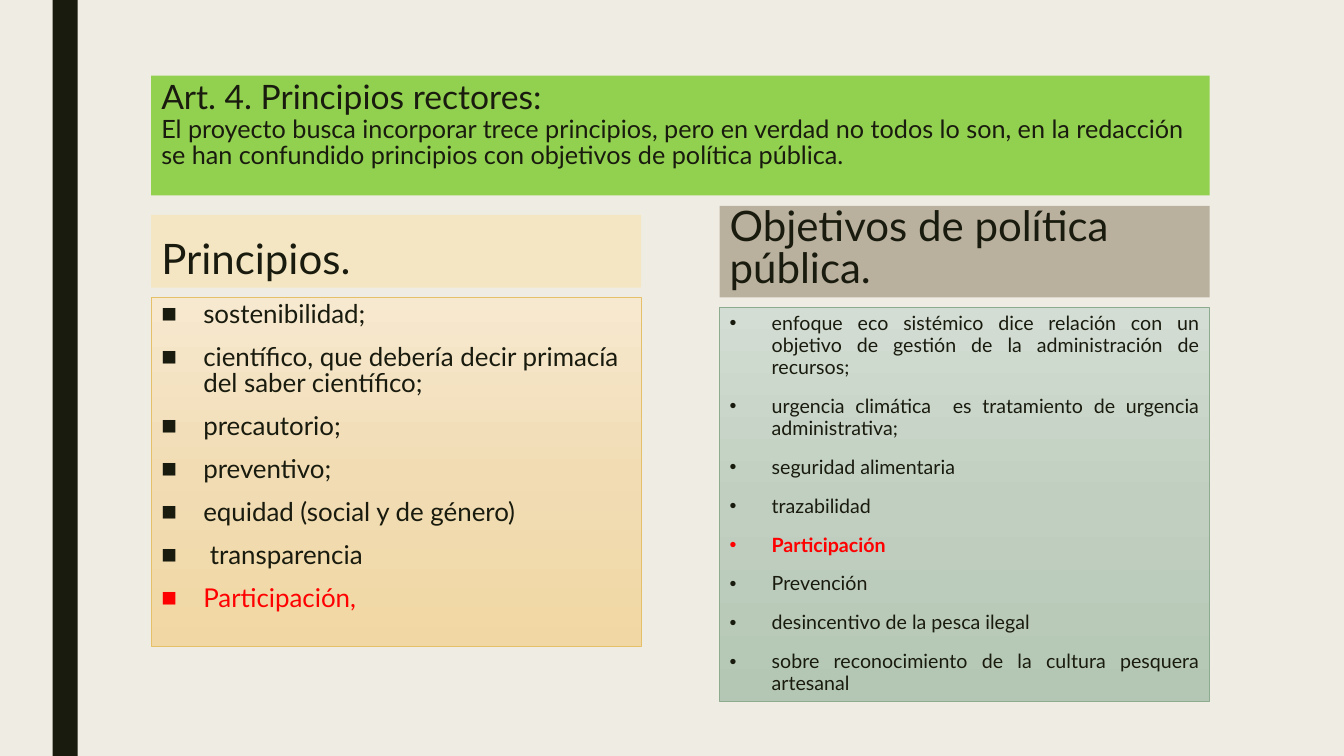
from copy import deepcopy

from lxml.etree import SubElement
from pptx import Presentation
from pptx.dml.color import RGBColor
from pptx.enum.shapes import MSO_SHAPE
from pptx.enum.text import MSO_ANCHOR, MSO_AUTO_SIZE, PP_ALIGN
from pptx.oxml.ns import qn
from pptx.util import Pt

FONT = "Lato"
INK = RGBColor(0x19, 0x1B, 0x0E)
RED = RGBColor(0xFF, 0x00, 0x00)
BACKGROUND = RGBColor(0xEF, 0xED, 0xE3)
GREEN = RGBColor(0x92, 0xD0, 0x50)
CREAM = RGBColor(0xF5, 0xE6, 0xC3)
TAUPE = RGBColor(0xBA, 0xB0, 0x9E)
GOLD_LINE = RGBColor(0xE6, 0xC0, 0x69)
SAGE_LINE = RGBColor(0x8D, 0xAB, 0x8E)
GOLD_STOPS = [RGBColor(0xF7, 0xE9, 0xD0), RGBColor(0xF1, 0xDC, 0xB4), RGBColor(0xF1, 0xD7, 0xA3)]
SAGE_STOPS = [RGBColor(0xD3, 0xDD, 0xD3), RGBColor(0xC0, 0xCF, 0xC0), RGBColor(0xB4, 0xC7, 0xB5)]

COLUMN_WIDTH = 350
LEFT, RIGHT = 108, 514


def prepare(shape, left, top, width, height, anchor=MSO_ANCHOR.TOP):
    """Place a placeholder and return its text frame."""
    shape.left, shape.top, shape.width, shape.height = map(Pt, (left, top, width, height))
    frame = shape.text_frame
    frame.word_wrap = True
    frame.auto_size = MSO_AUTO_SIZE.NONE
    frame.vertical_anchor = anchor
    return frame


def add_text(paragraph, text, size, color=INK, bold=False):
    run = paragraph.add_run()
    run.text = text
    for name, value in {"name": FONT, "size": Pt(size), "bold": bold}.items():
        setattr(run.font, name, value)
    run.font.color.rgb = color


presentation = Presentation()
presentation.slide_width, presentation.slide_height = Pt(960), Pt(540)
slide = presentation.slides.add_slide(presentation.slide_layouts.get_by_name("Comparison"))
slide.background.fill.solid()
slide.background.fill.fore_color.rgb = BACKGROUND
placeholders = {shape.placeholder_format.idx: shape for shape in slide.placeholders}

# Dark side bar
bar = slide.shapes.add_shape(MSO_SHAPE.RECTANGLE, Pt(37.5), Pt(0), Pt(18), Pt(540))
bar.shadow.inherit = False
bar.fill.solid()
bar.fill.fore_color.rgb = INK
bar.line.fill.background()

# Title
title = slide.shapes.title
title.fill.solid()
title.fill.fore_color.rgb = GREEN
paragraph = prepare(title, LEFT, 54, 756, 85.5).paragraphs[0]
paragraph.alignment = PP_ALIGN.LEFT
paragraph.line_spacing = 0.89
add_text(paragraph, "Art. 4. Principios rectores:", 24)
paragraph.add_line_break()
add_text(
    paragraph,
    "El proyecto busca incorporar trece principios, pero en verdad no todos lo son, "
    "en la redacción se han confundido principios con objetivos de política pública.",
    18,
)

# Column headings
headings = [
    (1, "Principios.", LEFT, 153.5, 52, CREAM),
    (3, "Objetivos de política pública.", RIGHT, 147, 65.5, TAUPE),
]
for index, text, left, top, height, color in headings:
    heading = placeholders[index]
    heading.fill.solid()
    heading.fill.fore_color.rgb = color
    paragraph = prepare(heading, left, top, COLUMN_WIDTH, height, MSO_ANCHOR.BOTTOM).paragraphs[0]
    paragraph.line_spacing = 0.84
    paragraph.space_before = Pt(0)
    add_text(paragraph, text, 30)

# Bulleted lists
principles = [
    "sostenibilidad;",
    "científico, que debería decir primacía del saber científico;",
    "precautorio;",
    "preventivo;",
    "equidad (social y de género)",
    " transparencia",
    "Participación,",
]
objectives = [
    "enfoque eco sistémico dice relación con un objetivo de gestión de la administración de recursos;",
    "urgencia climática  es tratamiento de urgencia administrativa;",
    "seguridad alimentaria",
    "trazabilidad",
    "Participación",
    "Prevención",
    "desincentivo de la pesca ilegal",
    "sobre reconocimiento de la cultura pesquera artesanal",
]
lists = [
    (2, principles, LEFT, 212.5, 249, GOLD_STOPS, GOLD_LINE, "■", 18.5, 0.84, PP_ALIGN.LEFT, False),
    (4, objectives, RIGHT, 219.5, 281.5, SAGE_STOPS, SAGE_LINE, "•", 14, 0.94, PP_ALIGN.JUSTIFY, True),
]
for index, items, left, top, height, colors, line, bullet, size, spacing, alignment, bold in lists:
    box = placeholders[index]
    frame = prepare(box, left, top, COLUMN_WIDTH, height)
    box.line.color.rgb = line
    box.line.width = Pt(0.5)

    # Three-stop vertical gradient
    box.fill.gradient()
    box.fill.gradient_angle = 270
    stop_list = next(box.element.iter(qn("a:gsLst")))
    stop_list.insert(1, deepcopy(stop_list[0]))
    for stop, color, position in zip(box.fill.gradient_stops, colors, (0, 0.5, 1)):
        stop.color.rgb = color
        stop.position = position

    for number, item in enumerate(items):
        paragraph = frame.add_paragraph() if number else frame.paragraphs[0]
        formats = {
            "alignment": alignment,
            "line_spacing": spacing,
            "space_before": Pt(10),
            "space_after": Pt(2),
        }
        for name, value in formats.items():
            setattr(paragraph, name, value)
        properties = paragraph._p.get_or_add_pPr()
        properties.set("marL", str(Pt(30)))
        properties.set("indent", str(-Pt(30)))
        SubElement(properties, qn("a:buFont"), typeface="Arial")
        SubElement(properties, qn("a:buChar"), char=bullet)
        highlighted = item.startswith("Participación")
        add_text(paragraph, item, size, RED if highlighted else INK, bold and highlighted)

presentation.save("out.pptx")
